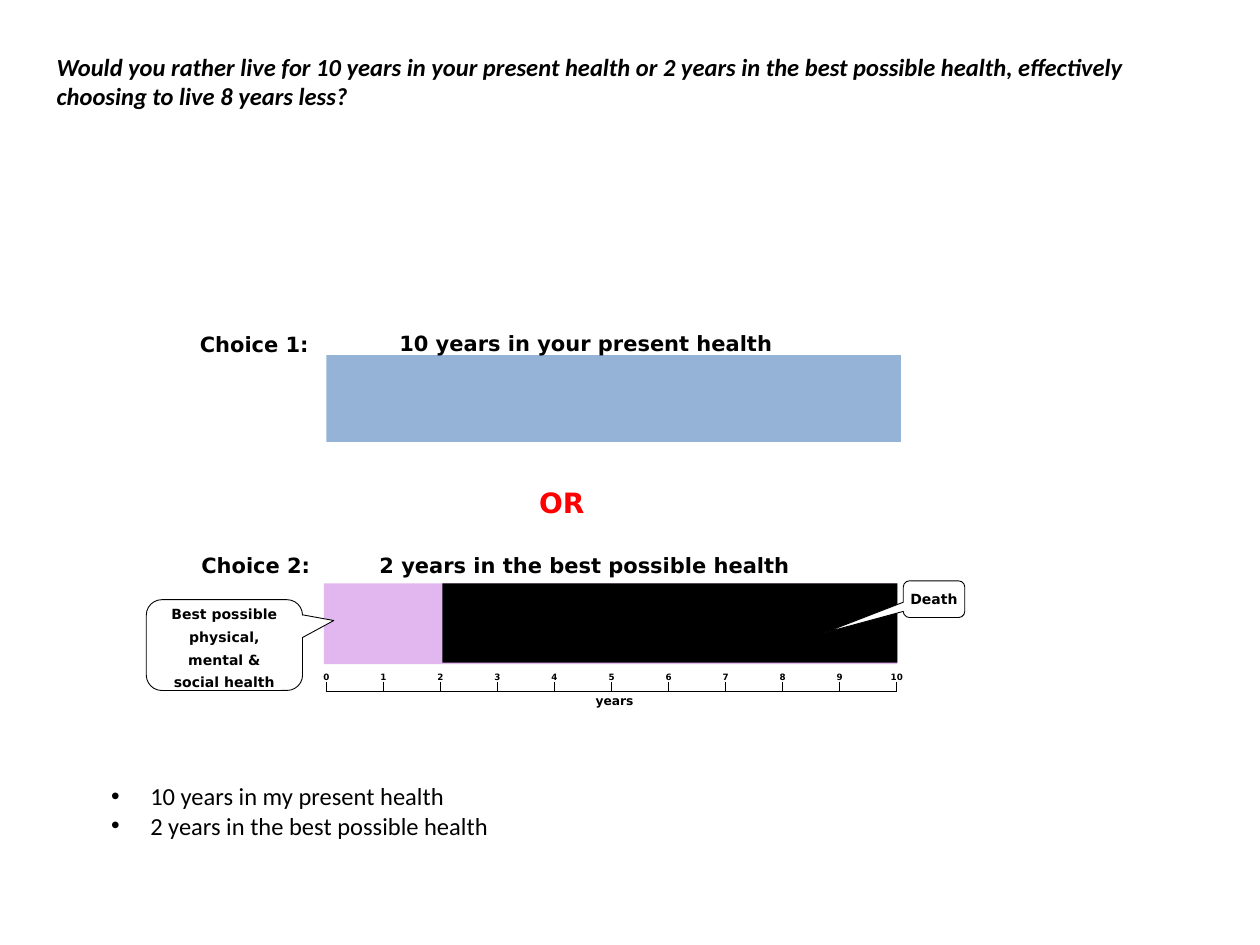
"""Build the slide that compares ten years in present health with two in the best health."""
from dataclasses import dataclass
from typing import Optional

from lxml import etree
from pptx import Presentation
from pptx import util as u
from pptx.dml.color import RGBColor
from pptx.enum import shapes, text
from pptx.oxml import ns

COLOURS = {
    "ink": "000000",
    "paper": "FFFFFF",
    "present": "95B3D7",
    "best": "E2B7EF",
    "alert": "FF0000",
}
LABEL_FONT = "DejaVu Sans"
BODY_FONT = "Calibri"
YEARS = 10
AXIS_LEFT, AXIS_TOP, YEAR_WIDTH, TICK_HEIGHT = 6.58, 13.94, 1.15, 0.2
NUMBER_TOP, NUMBER_WIDTH, NUMBER_HEIGHT = 13.54, 0.2, 0.18


@dataclass
class Frame:
    left: float
    top: float
    width: float
    height: float

    def lengths(self) -> list:
        return [u.Cm(side) for side in (self.left, self.top, self.width, self.height)]


@dataclass
class Style:
    size: float
    font: str = LABEL_FONT
    colour: str = "ink"
    bold: bool = True
    italic: bool = False
    align: text.PP_ALIGN = text.PP_ALIGN.LEFT
    anchor: text.MSO_ANCHOR = text.MSO_ANCHOR.TOP
    inset: tuple = (0, 0)
    wrap: bool = True
    line_spacing: Optional[float] = None


@dataclass
class Label:
    words: str
    frame: Frame
    style: Style


@dataclass
class Bar:
    frame: Frame
    colour: str


@dataclass
class Callout:
    words: str
    frame: Frame
    pointer: tuple
    style: Style


INSET = (0.25, 0.13)
CENTRED = {"align": text.PP_ALIGN.CENTER, "anchor": text.MSO_ANCHOR.MIDDLE}
QUESTION = Label(
    "Would you rather live for 10 years in your present health or 2 years in the best "
    "possible health, effectively choosing to live 8 years less?",
    Frame(1.14, 1.04, 22.33, 1.19),
    Style(14, BODY_FONT, italic=True),
)
ANSWERS = Label(
    "10 years in my present health\n2 years in the best possible health",
    Frame(2.24, 15.75, 11.81, 1.8),
    Style(14, BODY_FONT, bold=False),
)
LABELS = [
    Label("10 years in your present health", Frame(7.8, 6.53, 8.46, 0.76), Style(12, inset=INSET)),
    Label("2 years in the best possible health", Frame(7.65, 11.13, 11.25, 0.51), Style(12)),
    Label("Choice 1:", Frame(3.78, 6.55, 3.1, 0.76), Style(12, inset=INSET)),
    Label("Choice 2:", Frame(3.81, 11, 2.87, 0.76), Style(12, inset=INSET)),
    Label("OR", Frame(10.62, 9.65, 2.16, 0.94), Style(16, colour="alert", inset=INSET)),
    Label("years", Frame(12.01, 13.97, 0.89, 0.3), Style(7, wrap=False)),
]
BARS = [
    Bar(Frame(6.58, 7.16, 11.58, 1.75), "present"),
    Bar(Frame(6.53, 11.76, 11.56, 1.63), "best"),
    Bar(Frame(8.92, 11.76, 9.17, 1.6), "ink"),
]
CALLOUTS = [
    Callout("Death", Frame(18.21, 11.71, 1.24, 0.74), (-1.79, 0.92, 0.17), Style(8, **CENTRED)),
    Callout(
        "Best possible physical, mental & social health",
        Frame(2.95, 12.09, 3.15, 1.83),
        (0.7, -0.27, 0.17),
        Style(8, inset=(0.25, 0.2), line_spacing=13, **CENTRED),
    ),
]


def colour(name: str) -> RGBColor:
    return RGBColor.from_string(COLOURS[name])


def apply(target, values: dict) -> None:
    for name, value in values.items():
        setattr(target, name, value)


def write(box, words: str, style: Style) -> None:
    side, end = (u.Cm(inset) for inset in style.inset)
    frame = box.text_frame
    frame.text = words
    apply(frame, {
        "word_wrap": style.wrap, "auto_size": text.MSO_AUTO_SIZE.NONE,
        "vertical_anchor": style.anchor, "margin_left": side, "margin_right": side,
        "margin_top": end, "margin_bottom": end,
    })
    for para in frame.paragraphs:
        para.alignment = style.align
        if style.line_spacing:
            apply(para, {"line_spacing": u.Pt(style.line_spacing), "space_before": u.Pt(style.size / 2)})
        for span in para.runs:
            apply(span.font, {
                "size": u.Pt(style.size), "name": style.font,
                "bold": style.bold, "italic": style.italic,
            })
            span.font.color.rgb = colour(style.colour)


def add_label(page, label: Label):
    box = page.shapes.add_textbox(*label.frame.lengths())
    write(box, label.words, label.style)
    return box


def add_bullets(box, indent: float) -> None:
    for para in box.text_frame.paragraphs:
        properties = para._p.get_or_add_pPr()
        properties.set("marL", str(u.Cm(indent)))
        properties.set("indent", str(-u.Cm(indent)))
        etree.SubElement(properties, ns.qn("a:buFont")).set("typeface", "Arial")
        etree.SubElement(properties, ns.qn("a:buChar")).set("char", "•")


def add_filled(page, kind: shapes.MSO_SHAPE, frame: Frame, fill: str):
    shape = page.shapes.add_shape(kind, *frame.lengths())
    shape.shadow.inherit = False
    shape.fill.solid()
    shape.fill.fore_color.rgb = colour(fill)
    return shape


def add_bar(page, bar: Bar) -> None:
    add_filled(page, shapes.MSO_SHAPE.RECTANGLE, bar.frame, bar.colour).line.fill.background()


def add_callout(page, callout: Callout) -> None:
    shape = add_filled(page, shapes.MSO_SHAPE.ROUNDED_RECTANGULAR_CALLOUT, callout.frame, "paper")
    shape.line.color.rgb = colour("ink")
    shape.line.width = u.Pt(0.5)
    for index, value in enumerate(callout.pointer):
        shape.adjustments[index] = value
    write(shape, callout.words, callout.style)


def add_line(page, *ends: float) -> None:
    line = page.shapes.add_connector(shapes.MSO_CONNECTOR.STRAIGHT, *(u.Cm(end) for end in ends))
    line.line.color.rgb = colour("ink")
    line.line.width = u.Pt(0.75)
    etree.SubElement(line._element.spPr, ns.qn("a:effectLst"))


def add_axis(page) -> None:
    style = Style(5, align=text.PP_ALIGN.CENTER, wrap=False)
    for year in range(YEARS + 1):
        tick = AXIS_LEFT + year * YEAR_WIDTH
        add_line(page, tick, AXIS_TOP - TICK_HEIGHT, tick, AXIS_TOP)
        if year < YEARS:
            add_line(page, tick, AXIS_TOP, tick + YEAR_WIDTH, AXIS_TOP)
        frame = Frame(tick - NUMBER_WIDTH / 2, NUMBER_TOP, NUMBER_WIDTH, NUMBER_HEIGHT)
        add_label(page, Label(str(year), frame, style))


def main() -> None:
    deck = Presentation()
    apply(deck, {"slide_width": u.Cm(25.4), "slide_height": u.Cm(19.05)})
    page = deck.slides.add_slide(deck.slide_layouts[5])
    title = page.shapes.title
    apply(title, dict(zip(("left", "top", "width", "height"), QUESTION.frame.lengths())))
    write(title, QUESTION.words, QUESTION.style)
    for bar in BARS:
        add_bar(page, bar)
    for label in LABELS:
        add_label(page, label)
    add_bullets(add_label(page, ANSWERS), 0.79)
    for callout in CALLOUTS:
        add_callout(page, callout)
    add_axis(page)
    deck.save("out.pptx")


if __name__ == "__main__":
    main()
